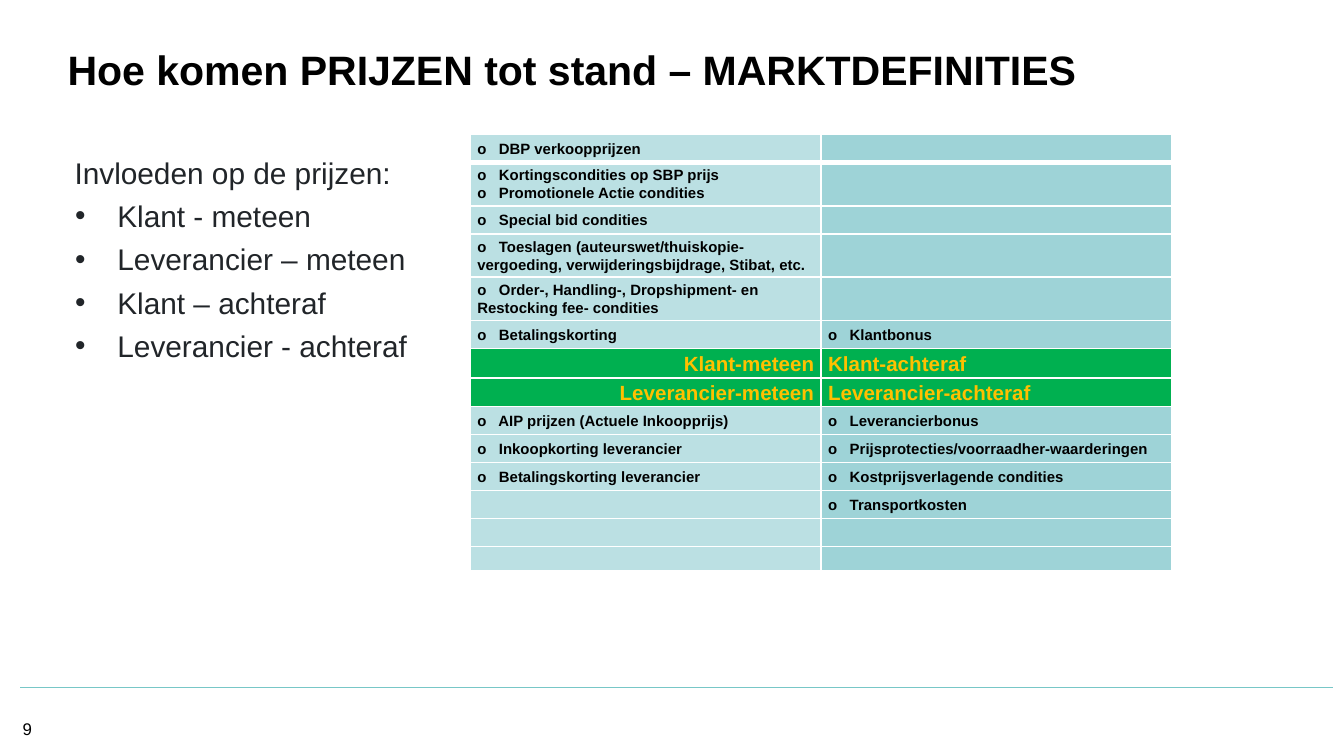
from dataclasses import dataclass

from lxml import etree
from pptx import Presentation
from pptx.dml.color import RGBColor
from pptx.enum.shapes import MSO_CONNECTOR
from pptx.enum.text import MSO_ANCHOR, PP_ALIGN
from pptx.oxml.ns import qn
from pptx.util import Cm, Pt

STRAIGHT = MSO_CONNECTOR.STRAIGHT
TOP, MIDDLE = MSO_ANCHOR.TOP, MSO_ANCHOR.MIDDLE
LEFT, RIGHT = PP_ALIGN.LEFT, PP_ALIGN.RIGHT


@dataclass(frozen=True)
class Theme:
    font: str = "Arial"
    black: str = "000000"
    body: str = "212529"
    rule: str = "78C7C7"
    border: str = "FFFFFF"
    direct: str = "BBE0E3"
    later: str = "9ED3D7"
    band: str = "00B050"
    band_text: str = "FFC000"
    title_size: float = 22
    body_size: float = 16
    band_size: float = 11
    cell_size: float = 8
    number_size: float = 9


THEME = Theme()

# Content
TITLE = "Hoe komen PRIJZEN tot stand – MARKTDEFINITIES"
INTRO = "Invloeden op de prijzen:"
INFLUENCES = [
    "Klant - meteen",
    "Leverancier – meteen",
    "Klant – achteraf",
    "Leverancier - achteraf",
]
PAGE_NUMBER = "9"
MARK = "o   "  # the letter o, two no-break spaces and a space

# Each row: items paid at once, items settled afterwards
CUSTOMER_ROWS = [
    (["DBP verkoopprijzen"], []),
    (["Kortingscondities op SBP prijs", "Promotionele Actie condities"], []),
    (["Special bid condities"], []),
    (["Toeslagen (auteurswet/thuiskopie- vergoeding, verwijderingsbijdrage, Stibat, etc."], []),
    (["Order-, Handling-, Dropshipment- en Restocking fee- condities"], []),
    (["Betalingskorting"], ["Klantbonus"]),
]
BAND_ROWS = [
    ("Klant-meteen", "Klant-achteraf"),
    ("Leverancier-meteen", "Leverancier-achteraf"),
]
SUPPLIER_ROWS = [
    (["AIP prijzen (Actuele Inkoopprijs)"], ["Leverancierbonus"]),
    (["Inkoopkorting leverancier"], ["Prijsprotecties/voorraadher-waarderingen"]),
    (["Betalingskorting leverancier"], ["Kostprijsverlagende condities"]),
    ([], ["Transportkosten"]),
    ([], []),
    ([], []),
]

# Table measures in cm
SINGLE, DOUBLE, BAND, LAST = 0.53, 0.82, 0.56, 0.46
ROW_HEIGHTS = [SINGLE, DOUBLE, SINGLE, DOUBLE, DOUBLE, SINGLE, BAND] + [SINGLE] * 6 + [LAST]
COLUMN_WIDTH = 6.63


def style(paragraph, size, color, bold=False):
    for run in paragraph.runs:
        run.font.name = THEME.font
        run.font.size = Pt(size)
        run.font.bold = bold
        run.font.color.rgb = RGBColor.from_string(color)


def add_text(slide, box, lines, size, color, bold=False, anchor=TOP, inset=0):
    frame = slide.shapes.add_textbox(*(Cm(v) for v in box)).text_frame
    frame.word_wrap = True
    frame.vertical_anchor = anchor
    frame.margin_left = frame.margin_right = Cm(inset)
    frame.margin_top = frame.margin_bottom = Cm(0.1)
    frame.text = "\n".join(lines)
    for paragraph in frame.paragraphs:
        style(paragraph, size, color, bold)
    return frame


def indent(paragraph, margin, first_line=0, bullet=None):
    properties = paragraph._p.get_or_add_pPr()
    properties.set("marL", str(Cm(margin)))
    properties.set("indent", str(Cm(first_line)))
    if bullet:
        etree.SubElement(properties, qn("a:buFont")).set("typeface", THEME.font)
        etree.SubElement(properties, qn("a:buChar")).set("char", bullet)


def set_borders(cell, widths):
    properties = cell._tc.get_or_add_tcPr()
    for side, width in zip("LRTB", widths):
        line = etree.SubElement(properties, qn(f"a:ln{side}"), w=str(Pt(width)))
        fill = etree.SubElement(line, qn("a:solidFill"))
        etree.SubElement(fill, qn("a:srgbClr"), val=THEME.border)


def fill_cell(cell, lines, fill, size, color, align, borders):
    set_borders(cell, borders)
    cell.fill.solid()
    cell.fill.fore_color.rgb = RGBColor.from_string(fill)
    cell.vertical_anchor = MIDDLE
    cell.margin_left = cell.margin_right = Cm(0.13)
    cell.margin_top = cell.margin_bottom = 0
    cell.text_frame.text = "\n".join(lines)
    for paragraph in cell.text_frame.paragraphs:
        paragraph.alignment = align
        paragraph.line_spacing = 1.07
        style(paragraph, size, color, bold=True)
        if not paragraph.runs:  # keeps empty rows low
            etree.SubElement(paragraph._p, qn("a:endParaRPr"), sz=str(size * 100))


def add_price_table(slide):
    rows = CUSTOMER_ROWS + BAND_ROWS + SUPPLIER_ROWS
    table = slide.shapes.add_table(
        len(rows), 2, Cm(8.89), Cm(2.54), Cm(2 * COLUMN_WIDTH), Cm(sum(ROW_HEIGHTS))
    ).table
    table.first_row = table.horz_banding = False
    for column in table.columns:
        column.width = Cm(COLUMN_WIDTH)
    for r, (row, height) in enumerate(zip(rows, ROW_HEIGHTS)):
        table.rows[r].height = Cm(height)
        # A thick line parts the first row from the rest
        borders = (1, 1, 3 if r == 1 else 1, 3 if r == 0 else 1)
        for c, content in enumerate(row):
            if row in BAND_ROWS:
                look = ([content], THEME.band, THEME.band_size, THEME.band_text,
                        (RIGHT, LEFT)[c])
            else:
                look = ([MARK + item for item in content], (THEME.direct, THEME.later)[c],
                        THEME.cell_size, THEME.black, LEFT)
            fill_cell(table.cell(r, c), *look, borders)


def main():
    deck = Presentation()
    deck.slide_width, deck.slide_height = Cm(25.4), Cm(14.29)
    slide = deck.slides.add_slide(deck.slide_layouts[6])

    # Footer rule
    rule = slide.shapes.add_connector(STRAIGHT, Cm(0.38), Cm(13), Cm(25.2), Cm(13))
    rule.line.color.rgb = RGBColor.from_string(THEME.rule)
    rule.line.width = Pt(0.75)
    etree.SubElement(rule._element.spPr, qn("a:effectLst"))

    # Title
    add_text(slide, (1.28, 0.74, 22.83, 1.12), [TITLE], THEME.title_size,
             THEME.black, bold=True, anchor=MIDDLE)

    # Influences
    influences = add_text(slide, (1.28, 2.82, 7.4, 10.1), [INTRO] + INFLUENCES,
                          THEME.body_size, THEME.body)
    intro, *points = influences.paragraphs
    indent(intro, 0.13)
    for point in points:
        point.space_before = Pt(4)
        indent(point, 0.94, -0.8, "•")

    # Page number
    add_text(slide, (0.2, 13.49, 3.15, 0.8), [PAGE_NUMBER], THEME.number_size,
             THEME.black, inset=0.23)

    # Price table
    add_price_table(slide)
    deck.save("out.pptx")


if __name__ == "__main__":
    main()
